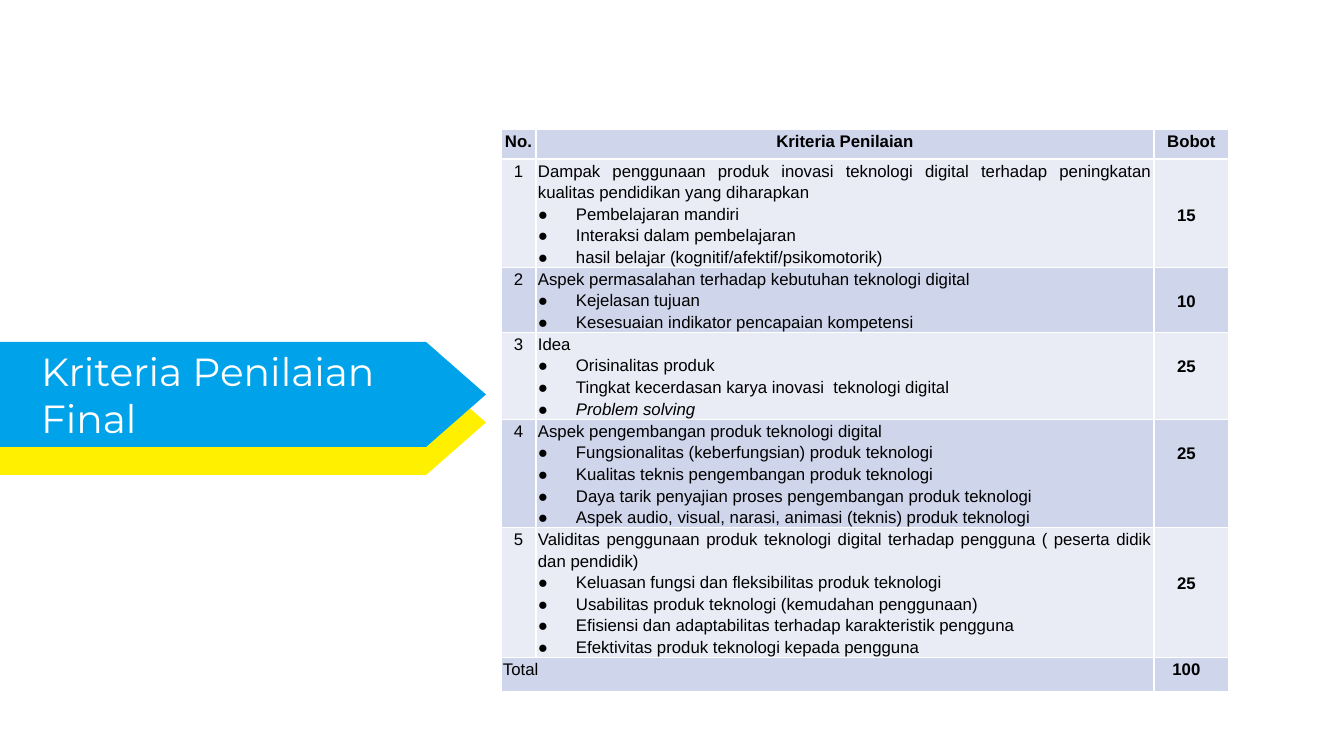
import pptx
import pptx.util
import pptx.dml.color
import pptx.enum.shapes
import pptx.enum.text
from lxml import etree
from pptx.oxml.ns import qn

# Content
TITLE = "Kriteria Penilaian Final"
HEADERS = ("No.", "Kriteria Penilaian", "Bobot")
# (criterion, points, weight, text lines above the weight, row height in px)
CRITERIA = [
    ("Dampak penggunaan produk inovasi teknologi digital terhadap peningkatan "
     "kualitas pendidikan yang diharapkan",
     ["Pembelajaran mandiri", "Interaksi dalam pembelajaran",
      "hasil belajar (kognitif/afektif/psikomotorik)"], "15", 2, 108),
    ("Aspek permasalahan terhadap kebutuhan teknologi digital",
     ["Kejelasan tujuan", "Kesesuaian indikator pencapaian kompetensi"], "10", 1, 65),
    ("Idea",
     ["Orisinalitas produk", "Tingkat kecerdasan karya inovasi  teknologi digital",
      "Problem solving"], "25", 1, 87),
    ("Aspek pengembangan produk teknologi digital",
     ["Fungsionalitas (keberfungsian) produk teknologi",
      "Kualitas teknis pengembangan produk teknologi",
      "Daya tarik penyajian proses pengembangan produk teknologi",
      "Aspek audio, visual, narasi, animasi (teknis) produk teknologi"], "25", 1, 108),
    ("Validitas penggunaan produk teknologi digital terhadap pengguna "
     "( peserta didik dan pendidik)",
     ["Keluasan fungsi dan fleksibilitas produk teknologi",
      "Usabilitas produk teknologi (kemudahan penggunaan)",
      "Efisiensi dan adaptabilitas terhadap karakteristik pengguna",
      "Efektivitas produk teknologi kepada pengguna"], "25", 2, 130),
]
ITALIC_POINTS = {"Problem solving"}
TOTAL = ("Total", "100")

# Theme and geometry, lengths in px
THEME = {
    "blue": "00A2EA", "yellow": "FFF000", "white": "FFFFFF", "black": "000000",
    "bands": ("CFD5EA", "E9EBF5"),
    "title_font": "Montserrat", "title_size": 28,
    "table_font": "Arial", "table_size": 12, "line_spacing": 1.15,
}
SLIDE_SIZE = (1344, 756)
COLUMNS = (35, 618, 75)
TABLE_LEFT, TABLE_TOP = 501, 129
HEADER_HEIGHT, TOTAL_HEIGHT, LINE_HEIGHT = 30, 34, 22
CELL_MARGIN, WEIGHT_MARGIN, BULLET_INDENT = 2, 12, 38
ARROWS = [("yellow", -164, 370, 650, 105), ("blue", -130, 342, 616, 105)]
TITLE_BOX = (31, 342, 394, 105)

ALIGN = pptx.enum.text.PP_ALIGN


def px(length):
    return pptx.util.Emu(round(length * 914400 / 100.8))


def color(name):
    return pptx.dml.color.RGBColor.from_string(THEME.get(name, name))


def add_run(paragraph, text, font, size, ink, bold=False, italic=False):
    run = paragraph.add_run()
    run.text = text
    run.font.name, run.font.size = font, pptx.util.Pt(size)
    run.font.bold, run.font.italic = bold, italic
    run.font.color.rgb = color(ink)


def add_bullet(paragraph):
    properties = paragraph._p.get_or_add_pPr()
    properties.set("marL", str(px(BULLET_INDENT)))
    properties.set("indent", str(-px(BULLET_INDENT)))
    etree.SubElement(properties, qn("a:buFont"), typeface=THEME["table_font"])
    etree.SubElement(properties, qn("a:buChar"), char="●")


def format_cell(cell, band, top=0, right=CELL_MARGIN):
    properties = cell._tc.get_or_add_tcPr()
    for side in ("lnL", "lnR", "lnT", "lnB"):
        line = etree.SubElement(properties, qn("a:" + side), w="12700")
        fill = etree.SubElement(line, qn("a:solidFill"))
        etree.SubElement(fill, qn("a:srgbClr"), val=THEME["white"])
    cell.fill.solid()
    cell.fill.fore_color.rgb = color(THEME["bands"][band])
    cell.margin_left, cell.margin_right = px(CELL_MARGIN), px(right)
    cell.margin_top, cell.margin_bottom = px(top), 0


def write_line(cell, text, align, bold=False, bullet=False):
    frame = cell.text_frame
    paragraph = frame.add_paragraph() if frame.text else frame.paragraphs[0]
    if bullet:
        add_bullet(paragraph)
    paragraph.alignment = align
    paragraph.line_spacing = THEME["line_spacing"]
    add_run(paragraph, text, THEME["table_font"], THEME["table_size"], "black",
            bold, text in ITALIC_POINTS)


def build_table(slide):
    heights = [HEADER_HEIGHT, *(item[-1] for item in CRITERIA), TOTAL_HEIGHT]
    table = slide.shapes.add_table(
        len(heights), len(COLUMNS), px(TABLE_LEFT), px(TABLE_TOP),
        px(sum(COLUMNS)), px(sum(heights))).table
    table.first_row = table.horz_banding = False
    for column, width in zip(table.columns, COLUMNS):
        column.width = px(width)
    for row, height in zip(table.rows, heights):
        row.height = px(height)

    # Header row
    for index, header in enumerate(HEADERS):
        format_cell(table.cell(0, index), 0)
        write_line(table.cell(0, index), header, ALIGN.CENTER, bold=True)

    # One row per criterion
    for number, (criterion, points, weight, lines_above, _) in enumerate(CRITERIA, 1):
        number_cell, criterion_cell, weight_cell = table.rows[number].cells
        band = number % 2
        format_cell(number_cell, band)
        write_line(number_cell, str(number), ALIGN.CENTER)
        format_cell(criterion_cell, band)
        write_line(criterion_cell, criterion, ALIGN.JUSTIFY)
        for point in points:
            write_line(criterion_cell, point, ALIGN.LEFT, bullet=True)
        format_cell(weight_cell, band, lines_above * LINE_HEIGHT, WEIGHT_MARGIN)
        write_line(weight_cell, weight, ALIGN.CENTER, bold=True)

    # Total row
    label_cell, hidden_cell, total_cell = table.rows[len(heights) - 1].cells
    label_cell.merge(hidden_cell)
    format_cell(label_cell, 0)
    write_line(label_cell, TOTAL[0], ALIGN.JUSTIFY)
    format_cell(total_cell, 0, right=WEIGHT_MARGIN)
    write_line(total_cell, TOTAL[1], ALIGN.CENTER, bold=True)


def build_title(slide):
    # Arrow banner running in from the left edge
    for fill, *box in ARROWS:
        arrow = slide.shapes.add_shape(
            pptx.enum.shapes.MSO_SHAPE.HEXAGON, *map(px, box))
        arrow.adjustments[0] = 0.57
        arrow.shadow.inherit = False
        arrow.fill.solid()
        arrow.fill.fore_color.rgb = color(fill)
        arrow.line.fill.background()

    # Title on top of the banner
    title = slide.shapes.title
    title.left, title.top, title.width, title.height = map(px, TITLE_BOX)
    title.element.getparent().append(title.element)
    frame = title.text_frame
    frame.word_wrap = True
    frame.auto_size = pptx.enum.text.MSO_AUTO_SIZE.NONE
    frame.vertical_anchor = pptx.enum.text.MSO_ANCHOR.MIDDLE
    frame.paragraphs[0].alignment = ALIGN.LEFT
    add_run(frame.paragraphs[0], TITLE, THEME["title_font"], THEME["title_size"], "white")


def main():
    presentation = pptx.Presentation()
    presentation.slide_width, presentation.slide_height = map(px, SLIDE_SIZE)
    slide = presentation.slides.add_slide(presentation.slide_layouts[5])
    build_table(slide)
    build_title(slide)
    presentation.save("out.pptx")


if __name__ == "__main__":
    main()
